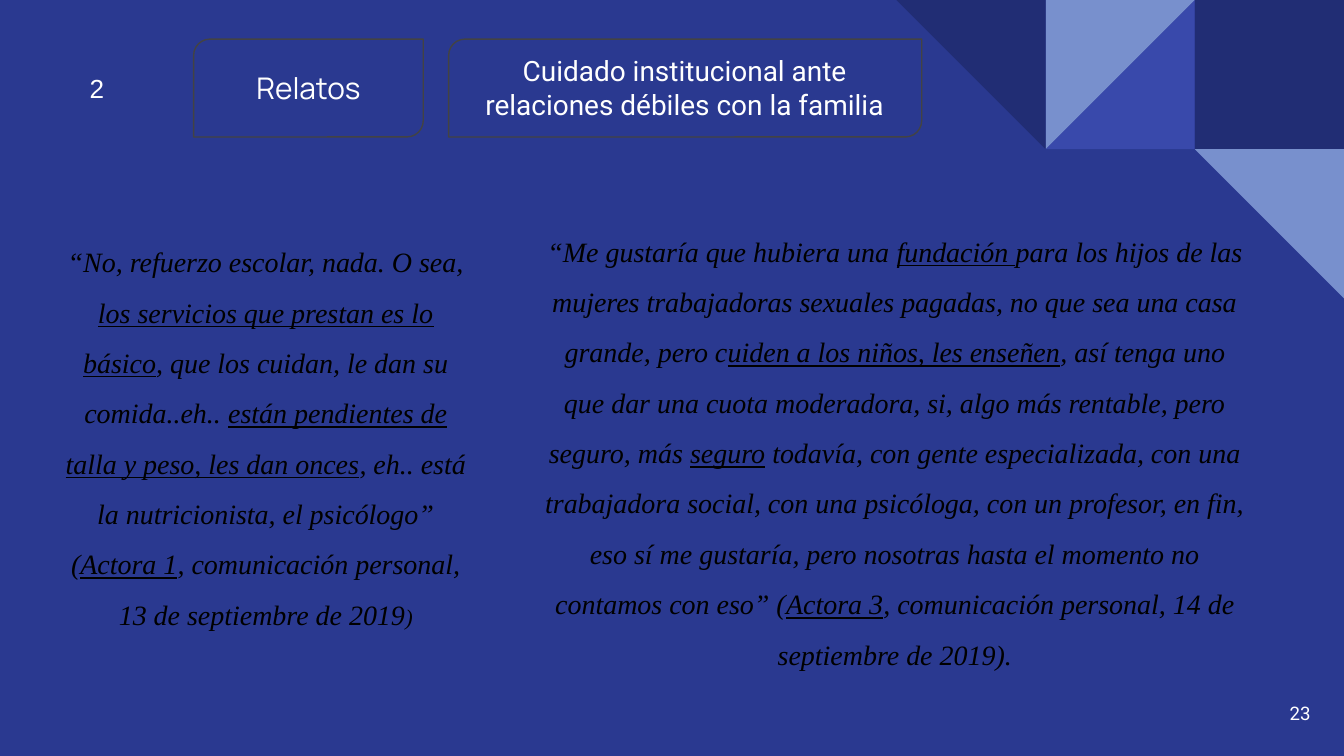
from dataclasses import dataclass

from pptx import Presentation
from pptx.dml.color import RGBColor
from pptx.enum.shapes import MSO_SHAPE
from pptx.enum.text import MSO_ANCHOR, MSO_AUTO_SIZE, PP_ALIGN
from pptx.util import Cm, Pt

RECT = MSO_SHAPE.RECTANGLE
TRIANGLE = MSO_SHAPE.RIGHT_TRIANGLE
TAB = MSO_SHAPE.ROUND_2_DIAG_RECTANGLE
OVAL = MSO_SHAPE.OVAL
TOP, MIDDLE = MSO_ANCHOR.TOP, MSO_ANCHOR.MIDDLE
CENTER, RIGHT = PP_ALIGN.CENTER, PP_ALIGN.RIGHT
NO_FIT = MSO_AUTO_SIZE.NONE


@dataclass(frozen=True)
class Theme:
    blue: str = "2A3990"
    navy: str = "212D74"
    indigo: str = "3949AB"
    sky: str = "7890CD"
    border: str = "434343"
    light: str = "FFFFFF"
    dark: str = "000000"
    section_size: int = 16
    body_size: int = 15
    badge_size: int = 14
    closing_size: int = 12
    number_size: int = 10


theme = Theme()


def setup_text(sp, anchor, align):
    tf = sp.text_frame
    tf.word_wrap = True
    tf.auto_size = NO_FIT
    tf.vertical_anchor = anchor
    tf.margin_left = tf.margin_right = tf.margin_top = tf.margin_bottom = Cm(0.25)
    p = tf.paragraphs[0]
    p.alignment = align
    return p


def add_run(p, text, font, size, color):
    r = p.add_run()
    r.text = text
    r.font.name = font
    r.font.size = Pt(size)
    r.font.color.rgb = RGBColor.from_string(color)
    return r


prs = Presentation()
prs.slide_width, prs.slide_height = Cm(25.4), Cm(14.29)
s = prs.slides.add_slide(prs.slide_layouts[5])
s.background.fill.solid()
s.background.fill.fore_color.rgb = RGBColor.from_string(theme.blue)

tile = 2.82
corner_left = 25.4 - 3 * tile
tiles = [
    (2, 0, RECT, 0, theme.navy),
    (1, 0, TRIANGLE, 270, theme.indigo),
    (1, 0, TRIANGLE, 90, theme.sky),
    (0, 0, TRIANGLE, 180, theme.navy),
    (2, 1, TRIANGLE, 180, theme.sky),
]
for col, row, kind, rotation, color in tiles:
    sp = s.shapes.add_shape(kind, Cm(corner_left + col * tile), Cm(row * tile), Cm(tile), Cm(tile))
    sp.rotation = rotation
    sp.shadow.inherit = False
    sp.fill.solid()
    sp.fill.fore_color.rgb = RGBColor.from_string(color)
    sp.line.fill.background()

header = [
    (TAB, 3.66, 0.74, 4.34, 1.85, theme.border, "Relatos", "Manrope", theme.section_size),
    (OVAL, 1.24, 0.94, 1.19, 1.47, theme.blue, "2", "Arial", theme.badge_size),
    (TAB, 8.48, 0.74, 8.94, 1.85, theme.border, "", "", 0),
]
for kind, x, y, w, h, border, text, font, size in header:
    sp = s.shapes.add_shape(kind, Cm(x), Cm(y), Cm(w), Cm(h))
    sp.shadow.inherit = False
    sp.fill.solid()
    sp.fill.fore_color.rgb = RGBColor.from_string(theme.blue)
    sp.line.color.rgb = RGBColor.from_string(border)
    sp.line.width = Pt(0.75)
    if text:
        add_run(setup_text(sp, MIDDLE, CENTER), text, font, size, theme.light)

title = s.shapes.title
title.left, title.top, title.width, title.height = Cm(8.66), Cm(0.76), Cm(8.56), Cm(1.27)
p = setup_text(title, TOP, CENTER)
p.line_spacing = 1.0
add_run(p, "Cuidado institucional ante relaciones débiles con la familia",
        "Roboto", theme.body_size, theme.light)
title.element.getparent().append(title.element)

sp = s.shapes.add_textbox(Cm(23.5), Cm(12.93), Cm(1.52), Cm(1.09))
add_run(setup_text(sp, MIDDLE, RIGHT), "23", "Roboto", theme.number_size, theme.light)

quotes = [
    (0.86, 4.06, 8.33, 8.33, [
        "“No, refuerzo escolar, nada. O sea, ",
        "los servicios que prestan es lo básico",
        ", que los cuidan, le dan su comida..eh.. ",
        "están pendientes de talla y peso, les dan onces",
        ", eh.. está la nutricionista, el psicólogo” (",
        "Actora 1",
        ", comunicación personal, 13 de septiembre de 2019",
    ], ")"),
    (9.98, 3.86, 13.87, 9.22, [
        "“Me gustaría que hubiera una ",
        "fundación ",
        "para los hijos de las mujeres trabajadoras sexuales pagadas, "
        "no que sea una casa grande, pero c",
        "uiden a los niños, les enseñen",
        ", así tenga uno que dar una cuota moderadora, si, algo más rentable, "
        "pero seguro, más ",
        "seguro",
        " todavía, con gente especializada, con una trabajadora social, con una "
        "psicóloga, con un profesor, en fin, eso sí me gustaría, pero nosotras "
        "hasta el momento no contamos con eso” (",
        "Actora 3",
        ", comunicación personal, 14 de septiembre de 2019).",
    ], ""),
]
for x, y, w, h, parts, closing in quotes:
    sp = s.shapes.add_textbox(Cm(x), Cm(y), Cm(w), Cm(h))
    p = setup_text(sp, TOP, CENTER)
    p.line_spacing = 1.5
    for i, part in enumerate(parts):
        r = add_run(p, part, "Times New Roman", theme.body_size, theme.dark)
        r.font.italic = True
        r.font.underline = i % 2 == 1
    if closing:
        r = add_run(p, closing, "Times New Roman", theme.closing_size, theme.dark)
        r.font.italic = True

prs.save("out.pptx")
